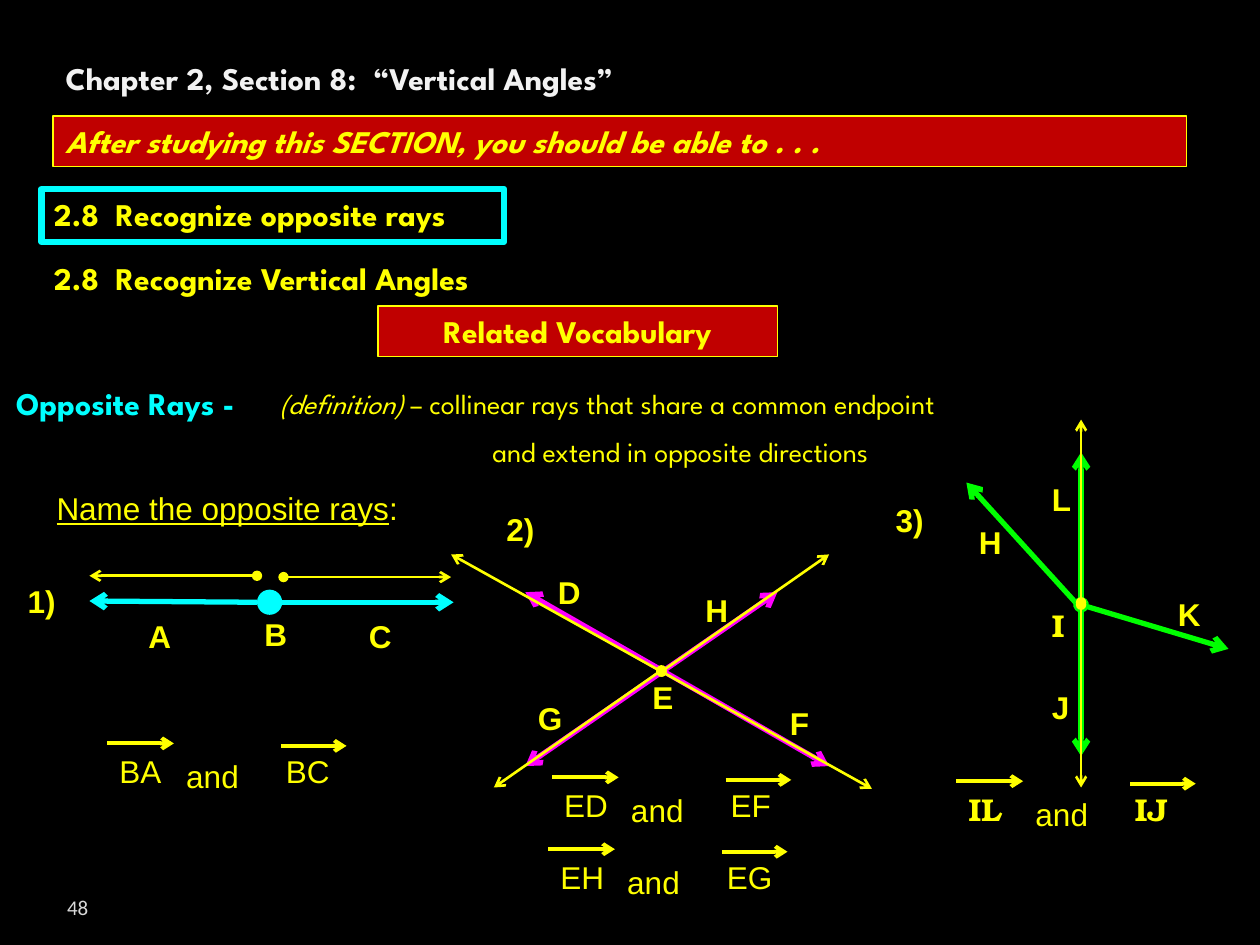
from lxml.etree import SubElement
from pptx import Presentation
from pptx.dml.color import RGBColor
from pptx.enum.shapes import MSO_CONNECTOR, MSO_SHAPE
from pptx.enum.text import MSO_ANCHOR, PP_ALIGN
from pptx.oxml.ns import qn
from pptx.util import Pt

PX = 9144  # 100 px to the inch
BLACK = RGBColor(0, 0, 0)
YELLOW = RGBColor(255, 255, 0)
CYAN = RGBColor(0, 255, 255)
PINK = RGBColor(255, 0, 255)
GREEN = RGBColor(0, 255, 0)
RED = RGBColor(192, 0, 0)
PALE = RGBColor(242, 242, 242)
GRAY = RGBColor(217, 217, 217)
HEAD, BODY, SERIF = "League Spartan", "Arial", "TeX Gyre Bonum"

deck = Presentation()
deck.slide_width, deck.slide_height = 1000 * PX, 750 * PX
slide = deck.slides.add_slide(deck.slide_layouts[5])
slide.background.fill.solid()
slide.background.fill.fore_color.rgb = BLACK
shapes = slide.shapes


def write(words, x, y, wide, font=BODY, size=18, color=YELLOW, bold=False, high=40, box=None):
    """Put words in box, or in a new text box, and return the paragraph."""
    box = box or shapes.add_textbox(0, 0, 0, 0)
    box.left, box.top, box.width, box.height = x * PX, y * PX, wide * PX, high * PX
    frame = box.text_frame
    frame.word_wrap = True
    frame.vertical_anchor = MSO_ANCHOR.TOP
    para = frame.paragraphs[0]
    para.alignment = PP_ALIGN.LEFT
    for part in words if isinstance(words, list) else [words]:
        para.add_run().text = part
    face = para.font
    face.name, face.size, face.bold = font, Pt(size), bold
    face.color.rgb = color
    return para


def ray(x1, y1, x2, y2, color, width, start=None):
    """Draw a line with an arrow at its end and an optional mark at its start."""
    line = shapes.add_connector(MSO_CONNECTOR.STRAIGHT, x1 * PX, y1 * PX, x2 * PX, y2 * PX)
    line.line.color.rgb = color
    line.line.width = Pt(width)
    ln = line.line._get_or_add_ln()
    if start:
        SubElement(ln, qn("a:headEnd"), type=start)
    SubElement(ln, qn("a:tailEnd"), type="arrow")
    SubElement(line._element.spPr, qn("a:effectLst"))


# Headings
write("Chapter 2, Section 8:  “Vertical Angles”", 42, 42, 900, HEAD, color=PALE, bold=True,
      box=shapes.title)
write("2.8  Recognize opposite rays", 33, 150, 450, HEAD, bold=True)
write("2.8  Recognize Vertical Angles", 33, 201, 450, HEAD, bold=True)

for words, x, y, wide in [
    ("Related Vocabulary", 300, 243, 317),
    ("After studying this SECTION, you should be able to . . .", 42, 92, 900),
]:
    bar = shapes.add_shape(MSO_SHAPE.RECTANGLE, 0, 0, 0, 0)
    bar.shadow.inherit = False
    bar.fill.solid()
    bar.fill.fore_color.rgb = RED
    bar.line.color.rgb = YELLOW
    bar.line.width = Pt(0.75)
    para = write(words, x, y, wide, HEAD, bold=True, box=bar)
    if x == 300:
        para.alignment = PP_ALIGN.CENTER
    else:
        para.font.italic = True

frame = shapes.add_shape(MSO_SHAPE.RECTANGLE, 33 * PX, 150 * PX, 367 * PX, 42 * PX)
frame.shadow.inherit = False
frame.fill.background()
frame.line.color.rgb = CYAN
frame.line.width = Pt(3.78)

# Definition
write("Opposite Rays -", 3, 300, 350, HEAD, color=CYAN, bold=True)
para = write(["(definition) ", "– collinear rays that share a common endpoint"],
             212, 302, 742, HEAD, 16, high=37)
para.runs[0].font.italic = True
write("and extend in opposite directions", 381, 340, 417, HEAD, 16, high=37)
para = write(["Name the opposite rays", ":"], 35, 383, 308)
para.runs[0].font.underline = True
page = write("48", 0, 700, 80, "Calibri", 12, GRAY, high=30)
page.alignment = PP_ALIGN.RIGHT
foot = shapes[-1].text_frame
foot.vertical_anchor = MSO_ANCHOR.BOTTOM
foot.margin_bottom = 0

# Figures
dot = shapes.add_shape(MSO_SHAPE.OVAL, 204 * PX, 468 * PX, 20 * PX, 20 * PX)
dot.shadow.inherit = False
dot.fill.solid()
dot.fill.fore_color.rgb = CYAN
dot.line.fill.background()

for x1, y1, x2, y2, color, start in [
    (220, 478, 360, 478, CYAN, None),
    (204, 478, 71, 477, CYAN, None),
    (417, 608, 617, 470, PINK, "arrow"),
    (658, 608, 417, 470, PINK, "arrow"),
    (858, 600, 858, 359, GREEN, "arrow"),
    (858, 483, 767, 383, GREEN, None),
    (858, 480, 975, 515, GREEN, "oval"),
]:
    ray(x1, y1, x2, y2, color, 3, start)

for name, x, y in [
    ("1)", 12, 457), ("A", 108, 485), ("B", 200, 483), ("C", 283, 485),
    ("2)", 392, 400), ("F", 617, 554), ("H", 550, 464), ("D", 433, 450),
    ("G", 417, 550), ("E", 508, 533),
    ("3)", 701, 393), ("K", 925, 467), ("I", 825, 476), ("L", 825, 376),
    ("H", 767, 410), ("J", 825, 541),
]:
    write(name, x, y, 58, SERIF if name == "I" else BODY, bold=True)

# Answers
for one, two, x, y in [
    ("BA", "BC", 85, 592), ("EH", "EG", 435, 676),
    ("ED", "EF", 438, 619), ("IL", "IJ", 759, 622),
]:
    serif = one == "IL"
    font = SERIF if serif else BODY
    write(one, x, y, 57, font, bold=serif)
    write("and", x + 53, y + 4, 77)
    write(two, x + 132, y, 67, font, bold=serif)
    ray(x, y - 2, x + 53, y - 2, YELLOW, 2.25)
    ray(x + 138, y, x + 190, y, YELLOW, 2.25)

# Opposite rays
for x1, y1, x2, y2 in [
    (204, 457, 71, 457), (225, 458, 358, 458),
    (525, 533, 692, 626), (525, 533, 358, 440),
    (525, 533, 658, 440), (525, 532, 392, 625),
    (858, 478, 858, 333), (858, 480, 858, 625),
]:
    ray(x1, y1, x2, y2, YELLOW, 1.5, "oval")

deck.save("out.pptx")
